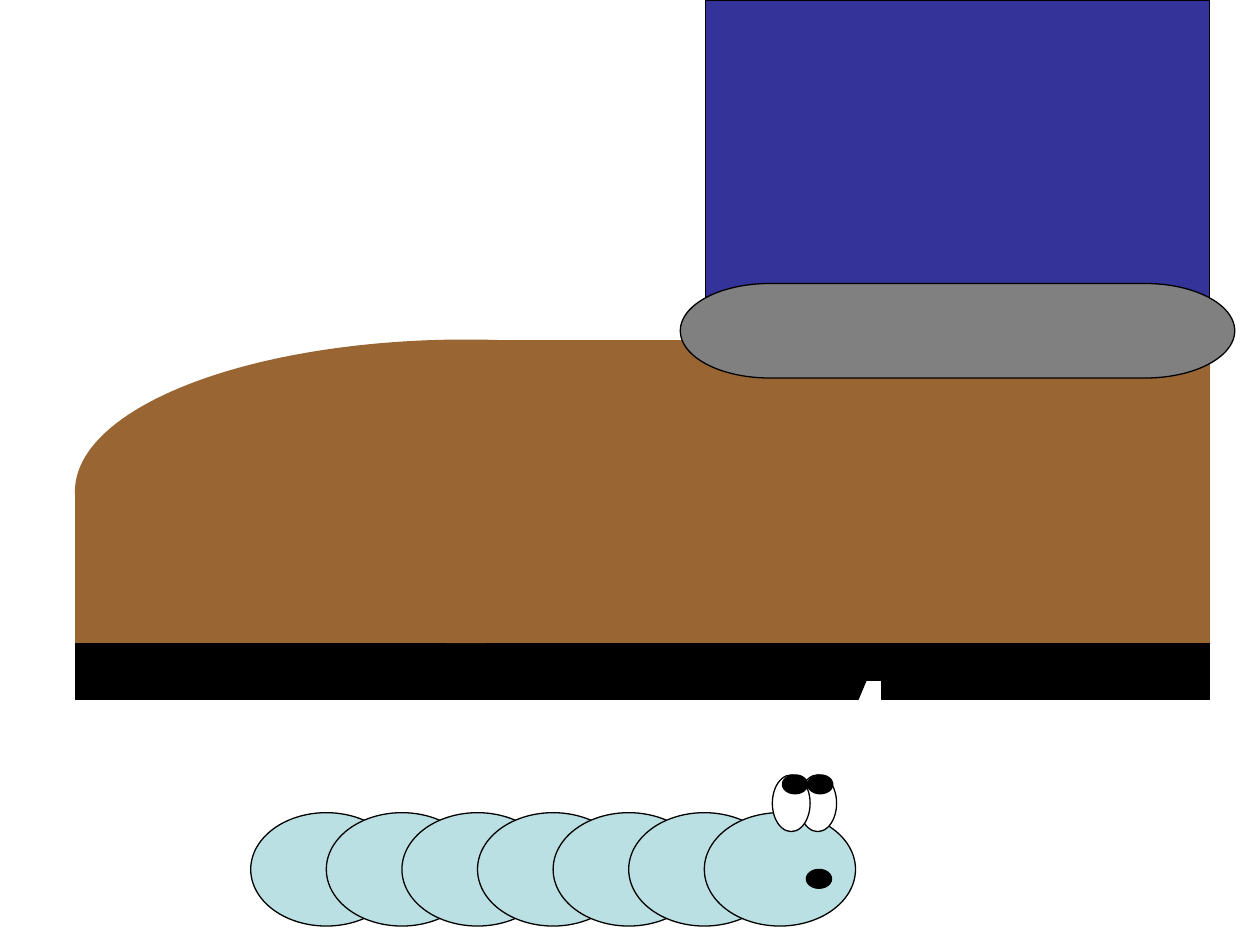
"""Build a slide with a caterpillar under a raised boot."""
from pptx import Presentation
from pptx.dml.color import RGBColor
from pptx.enum.shapes import MSO_SHAPE as SHAPE
from pptx.util import Inches, Pt

BLACK, WHITE, SKIN = "000000", "FFFFFF", "BBE0E3"
DENIM, LEATHER, CUFF = "333399", "996633", "808080"

SEGMENTS, SEGMENT_STEP = 7, 0.6
SEGMENT = (1.99, 6.45, 1.2, 0.9)

FACE = [
    (SHAPE.OVAL, (6.34, 6.15, 0.3, 0.45), WHITE, BLACK),
    (SHAPE.OVAL, (6.13, 6.15, 0.3, 0.45), WHITE, BLACK),
    (SHAPE.FLOWCHART_CONNECTOR, (6.41, 6.15, 0.2, 0.15), BLACK, BLACK),
    (SHAPE.FLOWCHART_CONNECTOR, (6.21, 6.15, 0.2, 0.15), BLACK, BLACK),
    (SHAPE.OVAL, (6.4, 6.9, 0.2, 0.15), BLACK, BLACK),
]
LEG = [(SHAPE.RECTANGLE, (5.6, 0, 4, 2.55), DENIM, BLACK)]
SOLE = [
    (SHAPE.RECTANGLE, (0.6, 5.1, 6, 0.45), BLACK, BLACK),
    (SHAPE.RECTANGLE, (7, 5.1, 2.6, 0.45), BLACK, BLACK),
    (SHAPE.PARALLELOGRAM, (6, 5.1, 1, 0.45), BLACK, BLACK),
    (SHAPE.RECTANGLE, (6.6, 5.1, 0.4, 0.3), BLACK, BLACK),
]
BOOT = [
    (SHAPE.OVAL, (0.6, 2.7, 6.2, 2.4), LEATHER, LEATHER),
    (SHAPE.RECTANGLE, (0.6, 3.9, 9, 1.2), LEATHER, LEATHER),
    (SHAPE.RECTANGLE, (4, 2.7, 5.6, 1.35), LEATHER, LEATHER),
    (SHAPE.FLOWCHART_TERMINATOR, (5.4, 2.25, 4.4, 0.75), CUFF, BLACK),
]


def rgb(value):
    return RGBColor.from_string(value)


def add_part(s, kind, box, fill, line):
    sp = s.shapes.add_shape(kind, *map(Inches, box))
    sp.shadow.inherit = False
    sp.fill.solid()
    sp.fill.fore_color.rgb = rgb(fill)
    sp.line.color.rgb = rgb(line)
    sp.line.width = Pt(0.75)
    if kind == SHAPE.PARALLELOGRAM:
        sp.adjustments[0] = 0.42


def main():
    prs = Presentation()
    prs.slide_width, prs.slide_height = Inches(10), Inches(7.5)
    s = prs.slides.add_slide(prs.slide_layouts[6])
    left, *rest = SEGMENT
    body = [(SHAPE.OVAL, (left + i * SEGMENT_STEP, *rest), SKIN, BLACK)
            for i in range(SEGMENTS)]
    for part in body + FACE + LEG + SOLE + BOOT:
        add_part(s, *part)
    prs.save("out.pptx")


if __name__ == "__main__":
    main()
